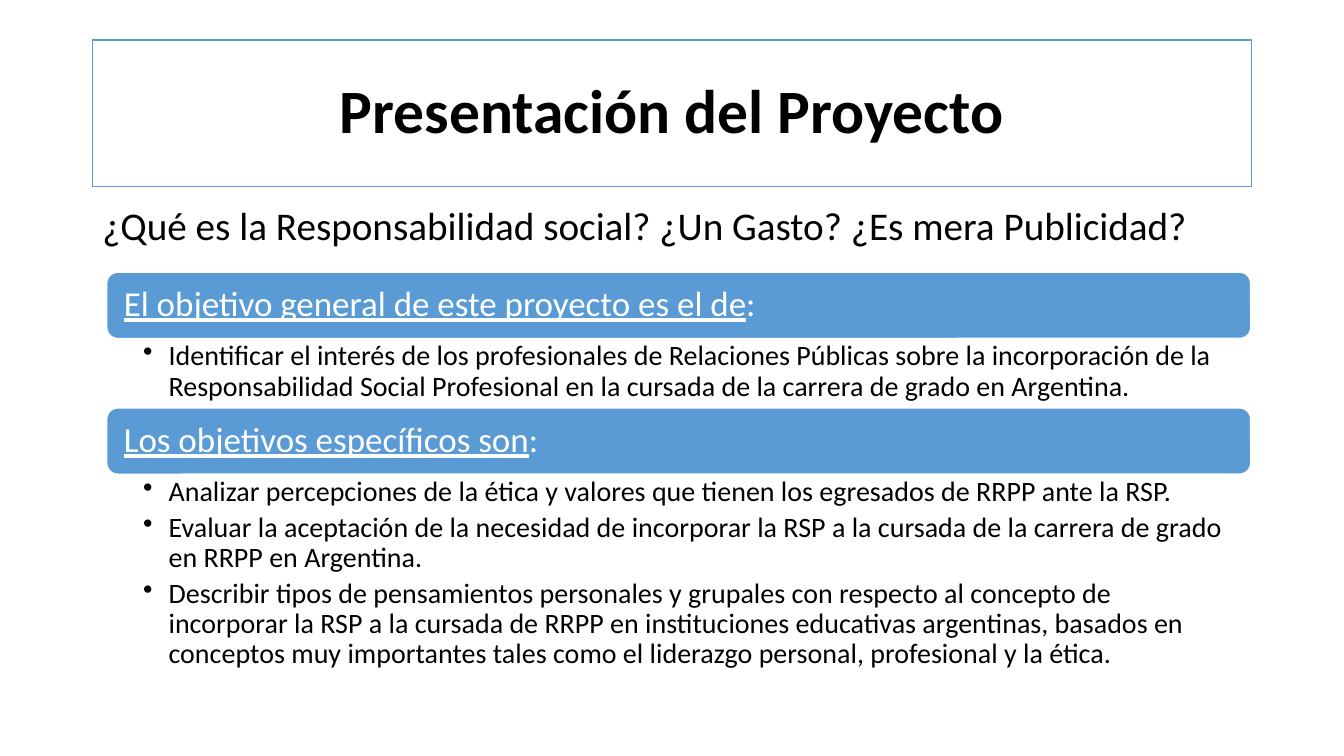
from dataclasses import dataclass

from lxml.etree import SubElement
from pptx import Presentation
from pptx.dml.color import RGBColor
from pptx.enum.shapes import MSO_SHAPE as Shape
from pptx.enum.text import MSO_ANCHOR as Anchor, PP_ALIGN as Align
from pptx.oxml.ns import qn
from pptx.util import Cm, Pt


@dataclass(frozen=True)
class Theme:
    font: str = "Calibri"
    blue: RGBColor = RGBColor(0x5B, 0x9B, 0xD5)
    white: RGBColor = RGBColor(0xFF, 0xFF, 0xFF)
    black: RGBColor = RGBColor(0, 0, 0)
    title: Pt = Pt(44)
    question: Pt = Pt(28)
    heading: Pt = Pt(25)
    goal: Pt = Pt(20)


theme = Theme()


def style(paragraph, size, color, align=Align.LEFT):
    paragraph.alignment = align
    paragraph.line_spacing = 0.9
    for run in paragraph.runs:
        run.font.name = theme.font
        run.font.size = size
        run.font.color.rgb = color


def add_panel(kind, left, top, width, height, fill, line):
    panel = slide.shapes.add_shape(kind, left, top, width, height)
    panel.shadow.inherit = False
    panel.fill.solid()
    panel.fill.fore_color.rgb = fill
    panel.line.color.rgb = line
    panel.line.width = Pt(1)
    panel.text_frame.word_wrap = True
    panel.text_frame.vertical_anchor = Anchor.MIDDLE
    return panel


prs = Presentation()
prs.slide_width, prs.slide_height = Cm(33.87), Cm(19.05)
slide = prs.slides.add_slide(prs.slide_layouts[6])

# Title
title = add_panel(Shape.RECTANGLE, Cm(2.33), Cm(1.01), Cm(29.21), Cm(3.69),
                  theme.white, theme.blue)
title.text_frame.text = "Presentación del Proyecto"
style(title.text_frame.paragraphs[0], theme.title, theme.black, Align.CENTER)
title.text_frame.paragraphs[0].runs[0].font.bold = True

# Opening question
question = slide.shapes.add_textbox(Cm(2.33), Cm(5.08), Cm(29.21), Cm(1.5))
question.text_frame.word_wrap = True
question.text_frame.text = "¿Qué es la Responsabilidad social? ¿Un Gasto? ¿Es mera Publicidad?"
style(question.text_frame.paragraphs[0], theme.question, theme.black)

# Objectives: heading, height of the list below it in cm, goals
objectives = [
    ("El objetivo general de este proyecto es el de", 1.75, [
        "Identificar el interés de los profesionales de Relaciones Públicas sobre la "
        "incorporación de la Responsabilidad Social Profesional en la cursada de la "
        "carrera de grado en Argentina.",
    ]),
    ("Los objetivos específicos son", 5.18, [
        "Analizar percepciones de la ética y valores que tienen los egresados de RRPP "
        "ante la RSP.",
        "Evaluar la aceptación de la necesidad de incorporar la RSP a la cursada de la "
        "carrera de grado en RRPP en Argentina.",
        "Describir tipos de pensamientos personales y grupales con respecto al concepto "
        "de incorporar la RSP a la cursada de RRPP en instituciones educativas "
        "argentinas, basados en conceptos muy importantes tales como el liderazgo "
        "personal, profesional y la ética.",
    ]),
]
left, width, heading_height = Cm(2.69), Cm(28.83), Cm(1.67)
top = Cm(6.86)

for heading_text, goals_height, goal_texts in objectives:
    # Heading bar
    heading = add_panel(Shape.ROUNDED_RECTANGLE, left, top, width, heading_height,
                        theme.blue, theme.white)
    heading.text_frame.margin_left = heading.text_frame.margin_right = Cm(0.35)
    heading_line = heading.text_frame.paragraphs[0]
    heading_line.text = heading_text
    heading_line.runs[0].font.underline = True
    heading_line.add_run().text = ":"
    style(heading_line, theme.heading, theme.white)
    top += heading_height

    # Bulleted goals
    goals = slide.shapes.add_textbox(left, top, width, Cm(goals_height))
    frame = goals.text_frame
    frame.word_wrap = True
    frame.margin_left, frame.margin_right = Cm(0.92), Cm(0.48)
    frame.margin_top = frame.margin_bottom = Cm(0.08)
    frame.text = "\n".join(goal_texts)
    for goal in frame.paragraphs:
        style(goal, theme.goal, theme.black)
        goal.space_after = Pt(4)
        properties = goal._p.get_or_add_pPr()
        properties.set("marL", str(Cm(0.64)))
        properties.set("indent", str(-Cm(0.64)))
        SubElement(properties, qn("a:buChar"), char="•")
    top += Cm(goals_height)

prs.save("out.pptx")
